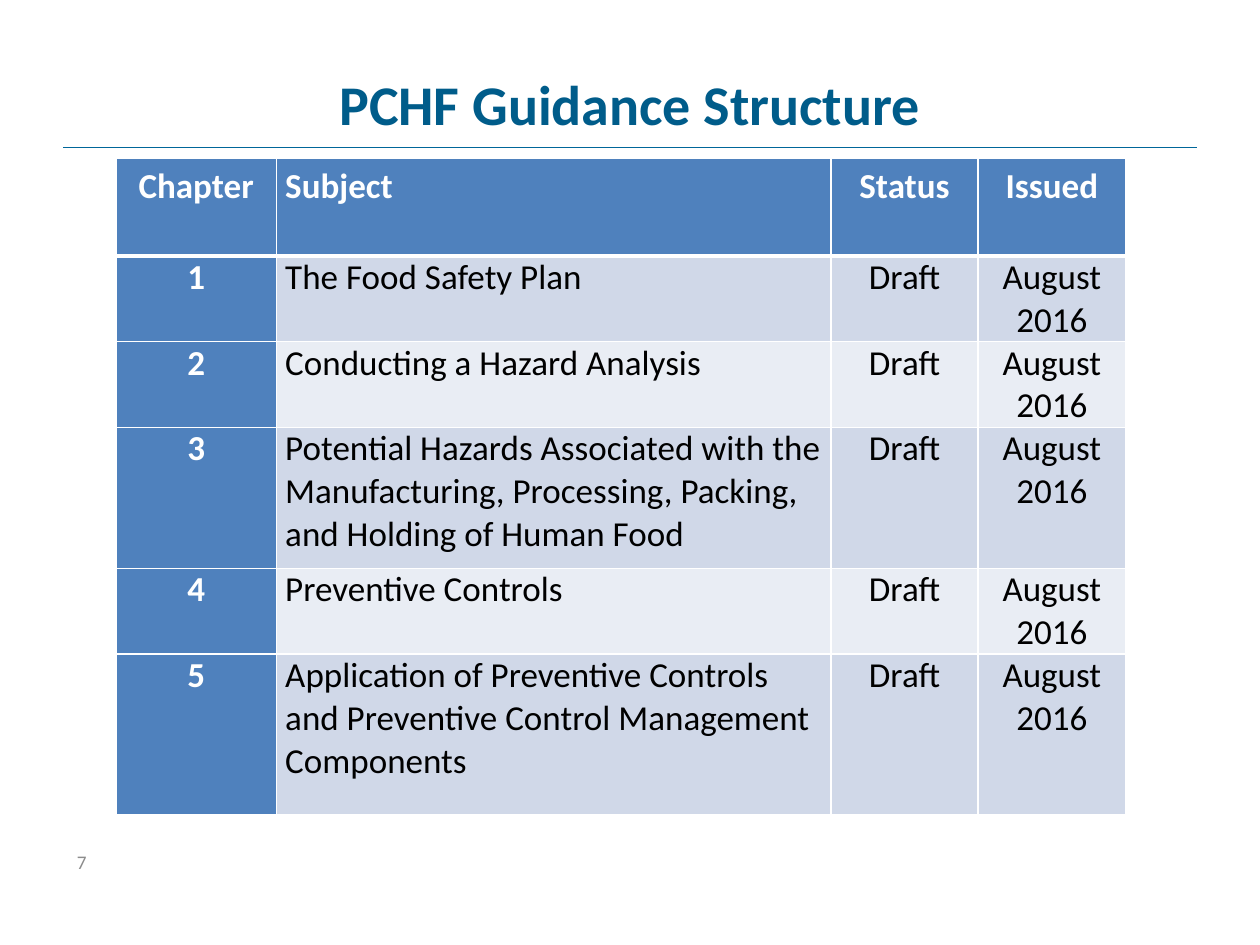
from lxml import etree
from pptx import Presentation
from pptx.dml.color import RGBColor
from pptx.enum import shapes, text
from pptx.oxml.ns import qn
from pptx.util import Cm, Pt

COLORS = {
    "title": "005C8A", "rule": "006699", "header": "4F81BD",
    "odd": "D0D8E8", "even": "E9EDF4",
    "white": "FFFFFF", "black": "000000", "grey": "8C8C8C",
}
LEFT, CENTER = text.PP_ALIGN.LEFT, text.PP_ALIGN.CENTER
COLUMN_WIDTHS = [3.23, 11.18, 2.97, 2.97]
ROW_HEIGHTS = [1.96, 1.55, 1.55, 2.84, 1.55, 3.23]
HEADINGS = ["Chapter", "Subject", "Status", "Issued"]
SUBJECTS = [
    "The Food Safety Plan",
    "Conducting a Hazard Analysis",
    "Potential Hazards Associated with the Manufacturing, Processing, "
    "Packing, and Holding of Human Food",
    "Preventive Controls",
    "Application of Preventive Controls and Preventive Control "
    "Management Components",
]


def rgb(name):
    return RGBColor.from_string(COLORS[name])


def write(tf, words, size=20, color="black", bold=False, align=LEFT, spacing=None):
    p = tf.paragraphs[0]
    p.alignment = align
    p.line_spacing = spacing
    r = p.add_run()
    r.text = words
    r.font.name = "Calibri"
    r.font.size = Pt(size)
    r.font.bold = bold
    r.font.color.rgb = rgb(color)


def add_title(s, words):
    sp = s.shapes.title
    sp.left, sp.top, sp.width, sp.height = Cm(1.27), Cm(0.76), Cm(22.86), Cm(2.62)
    sp.text_frame.vertical_anchor = text.MSO_ANCHOR.MIDDLE
    write(sp.text_frame, words, size=32, color="title", bold=True, align=CENTER)


def add_rule(s):
    line = s.shapes.add_connector(
        shapes.MSO_CONNECTOR.STRAIGHT, Cm(1.27), Cm(2.97), Cm(24.13), Cm(2.97))
    line.line.color.rgb = rgb("rule")
    line.line.width = Pt(0.75)
    etree.SubElement(line._element.spPr, qn("a:effectLst"))


def set_borders(cell, bottom=1, top=1):
    """Draw white borders, with widths in points."""
    tc_pr = cell._tc.get_or_add_tcPr()
    widths = {"lnL": 1, "lnR": 1, "lnT": top, "lnB": bottom}
    for i, (side, width) in enumerate(widths.items()):
        ln = etree.Element(qn("a:" + side), w=str(Pt(width)))
        fill = etree.SubElement(ln, qn("a:solidFill"))
        etree.SubElement(fill, qn("a:srgbClr"), val=COLORS["white"])
        tc_pr.insert(i, ln)


def fill_cell(cell, words, row, col):
    is_header = row == 0
    strong = is_header or col == 0
    cell.margin_left = cell.margin_right = Cm(0.18)
    cell.margin_top = cell.margin_bottom = 0
    cell.fill.solid()
    band = "odd" if row % 2 else "even"
    cell.fill.fore_color.rgb = rgb("header" if strong else band)
    set_borders(cell, bottom=3 if is_header else 1, top=3 if row == 1 else 1)
    write(cell.text_frame, words, color="white" if strong else "black",
          bold=strong, align=LEFT if col == 1 else CENTER,
          spacing=1.15 if is_header else None)


def add_chapter_table(s):
    rows = [HEADINGS] + [[str(n), subject, "Draft", "August 2016"]
                         for n, subject in enumerate(SUBJECTS, 1)]
    table = s.shapes.add_table(
        len(rows), len(HEADINGS), Cm(2.34), Cm(3.2),
        Cm(sum(COLUMN_WIDTHS)), Cm(sum(ROW_HEIGHTS))).table
    for column, width in zip(table.columns, COLUMN_WIDTHS):
        column.width = Cm(width)
    for i, (row, height) in enumerate(zip(rows, ROW_HEIGHTS)):
        table.rows[i].height = Cm(height)
        for j, words in enumerate(row):
            fill_cell(table.cell(i, j), words, i, j)


def add_page_number(s, number):
    tf = s.shapes.add_textbox(Cm(1.3), Cm(17.02), Cm(5.92), Cm(1.02)).text_frame
    tf.word_wrap = True
    write(tf, number, size=11, color="grey")


def main():
    prs = Presentation()
    prs.slide_width, prs.slide_height = Cm(25.4), Cm(19.05)
    s = prs.slides.add_slide(prs.slide_layouts[5])
    add_rule(s)
    add_title(s, "PCHF Guidance Structure")
    add_chapter_table(s)
    add_page_number(s, "7")
    prs.save("out.pptx")


if __name__ == "__main__":
    main()
